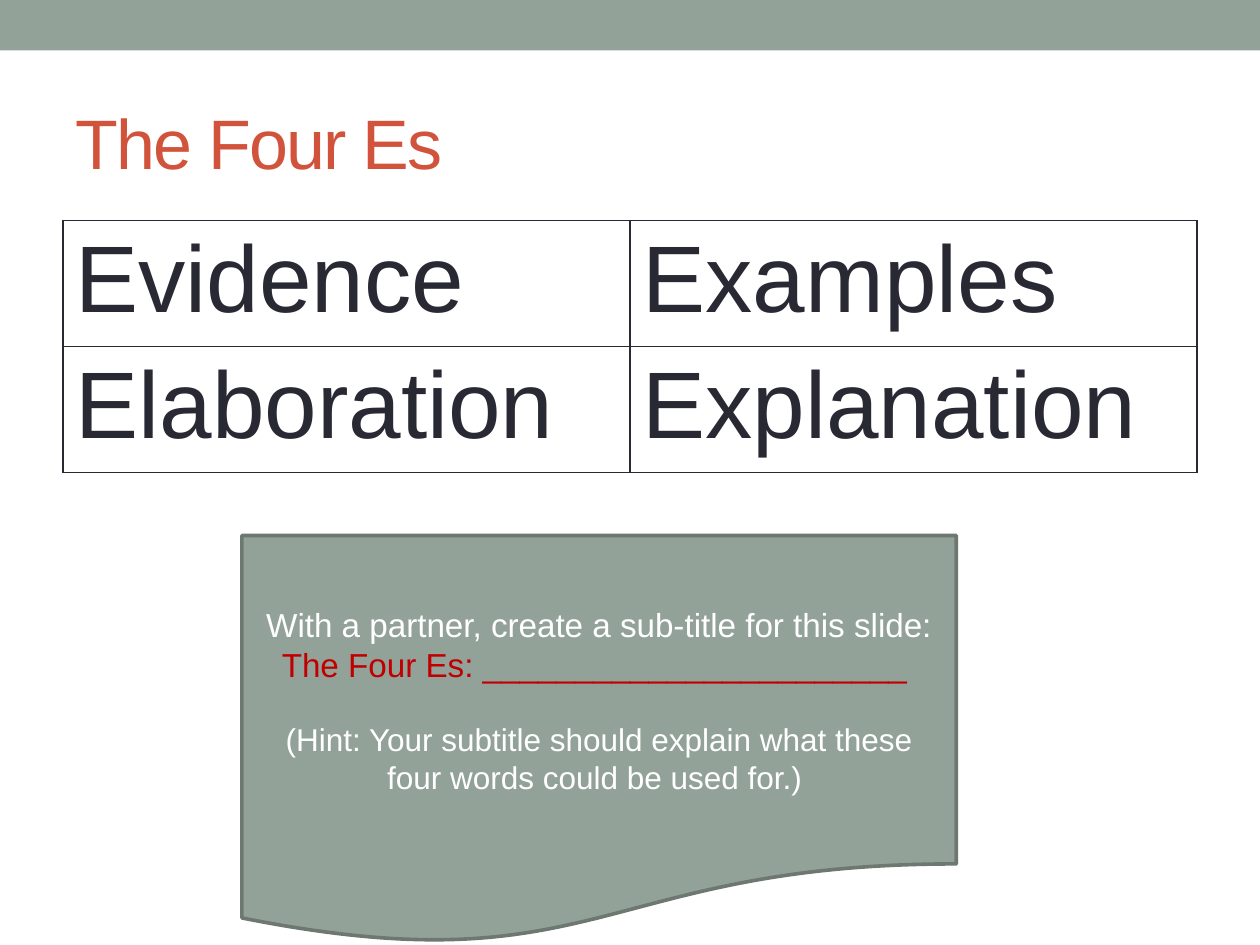
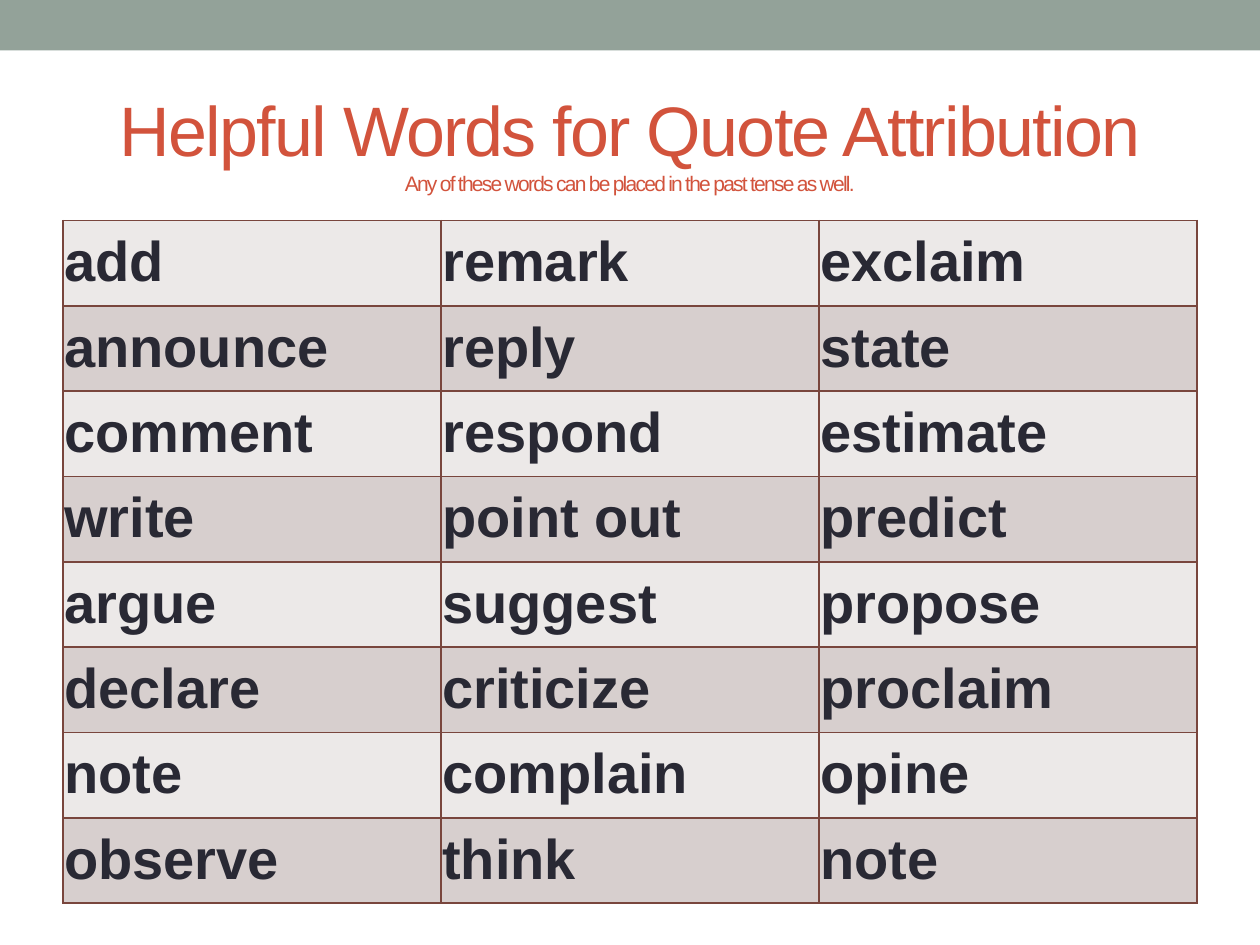
import dataclasses
import typing

import lxml.etree
import pptx
import pptx.dml.color
import pptx.enum.shapes
import pptx.enum.text
import pptx.oxml.ns
import pptx.util

Inches = pptx.util.Inches
Pt = pptx.util.Pt
Shapes = pptx.enum.shapes.MSO_SHAPE
Align = pptx.enum.text.PP_ALIGN
Middle = pptx.enum.text.MSO_ANCHOR.MIDDLE

FONT = "Arial"
SAGE = "93A299"
SAGE_DARK = "6D7871"
RUST = "D2533C"
RUST_DARK = "79463D"
INK = "292934"
WHITE = "FFFFFF"
RED = "C00000"
BAND_FILLS = ("ECE9E8", "D7CFCE")
TITLE_TRACKING = "-100"


@dataclasses.dataclass(frozen=True)
class Span:
    text: str
    size: float
    color: str
    bold: bool = False


@dataclasses.dataclass(frozen=True)
class Para:
    spans: tuple[Span, ...]
    format: dict[str, typing.Any] = dataclasses.field(default_factory=dict)


@dataclasses.dataclass(frozen=True)
class Grid:
    rows: tuple[tuple[str, ...], ...]
    row_height: float
    size: float
    border: str
    bold: bool = False
    fills: tuple[str, ...] = ()
    cell_format: dict[str, typing.Any] = dataclasses.field(default_factory=dict)
    para_format: dict[str, typing.Any] = dataclasses.field(default_factory=dict)


def rgb(color: str) -> pptx.dml.color.RGBColor:
    return pptx.dml.color.RGBColor.from_string(color)


def set_format(target: typing.Any, values: dict[str, typing.Any]) -> None:
    for name, value in values.items():
        setattr(target, name, value)


def paint(fill: typing.Any, color: str) -> None:
    fill.solid()
    fill.fore_color.rgb = rgb(color)


def write(frame: typing.Any, paras: typing.Sequence[Para]) -> None:
    for index, para in enumerate(paras):
        target = frame.add_paragraph() if index else frame.paragraphs[0]
        set_format(target, para.format)
        for position, span in enumerate(para.spans):
            if position:
                target.add_line_break()
            run = target.add_run()
            run.text = span.text
            set_format(
                run.font,
                {"name": FONT, "size": Pt(span.size), "bold": span.bold},
            )
            run.font.color.rgb = rgb(span.color)


def add_block(page: typing.Any, kind: Shapes, at: tuple[float, ...], color: str) -> typing.Any:
    box = page.shapes.add_shape(kind, *map(Inches, at))
    box.shadow.inherit = False
    paint(box.fill, color)
    box.line.fill.background()
    return box


def start_page(deck: typing.Any, *title: Span, align: Align = Align.LEFT) -> typing.Any:
    page = deck.slides.add_slide(deck.slide_layouts[6])
    add_block(page, Shapes.RECTANGLE, (0, 0, 10, 0.4), SAGE)
    box = page.shapes.add_textbox(*map(Inches, (0.5, 0.58, 9, 1.08)))
    set_format(box.text_frame, {"word_wrap": True, "vertical_anchor": Middle})
    write(box.text_frame, [Para(title, {"alignment": align})])
    for run in box.text_frame.paragraphs[0].runs:
        run.font._element.set("spc", TITLE_TRACKING)
    return page


def add_borders(cell: typing.Any, color: str) -> None:
    qn = pptx.oxml.ns.qn
    properties = cell._tc.get_or_add_tcPr()
    for side in ("lnL", "lnR", "lnT", "lnB"):
        line = lxml.etree.SubElement(properties, qn(f"a:{side}"), w=str(Pt(1)))
        solid = lxml.etree.SubElement(line, qn("a:solidFill"))
        lxml.etree.SubElement(solid, qn("a:srgbClr"), val=color)


def add_grid(page: typing.Any, grid: Grid) -> None:
    row_count, column_count = len(grid.rows), len(grid.rows[0])
    table = page.shapes.add_table(
        row_count,
        column_count,
        *map(Inches, (0.5, 1.75, 9, row_count * grid.row_height)),
    ).table
    set_format(table, {"first_row": False, "horz_banding": False})
    for row_index, words in enumerate(grid.rows):
        table.rows[row_index].height = Inches(grid.row_height)
        for column_index, word in enumerate(words):
            cell = table.cell(row_index, column_index)
            set_format(cell, grid.cell_format)
            add_borders(cell, grid.border)
            if grid.fills:
                paint(cell.fill, grid.fills[row_index % len(grid.fills)])
            else:
                cell.fill.background()
            span = Span(word, grid.size, INK, grid.bold)
            write(cell.text_frame, [Para((span,), grid.para_format)])


def add_partner_task(page: typing.Any) -> None:
    box = add_block(page, Shapes.FLOWCHART_DOCUMENT, (1.92, 4.25, 5.67, 3.25), SAGE)
    paint(box.line.fill, SAGE_DARK)
    box.line.width = Pt(2.08)
    set_format(box.text_frame, {"word_wrap": True, "vertical_anchor": Middle})
    centered = {"alignment": Align.CENTER}
    prompt = Span("With a partner, create a sub-title for this slide:", 19, WHITE)
    answer = Span("The Four Es: " + "_" * 23 + " ", 19, RED)
    hint = Span(
        "(Hint: Your subtitle should explain what these four words could be used for.) ",
        18,
        WHITE,
    )
    write(
        box.text_frame,
        [
            Para((prompt,), centered),
            Para((answer,), centered),
            Para((hint,), centered | {"space_before": Pt(20.7)}),
        ],
    )


FOUR_ES = Grid(
    rows=(("Evidence", "Examples"), ("Elaboration", "Explanation")),
    row_height=0.94,
    size=54,
    border=INK,
)

MARGINS = ("margin_left", "margin_top", "margin_right", "margin_bottom")

ATTRIBUTION_WORDS = Grid(
    rows=(
        ("add", "remark", "exclaim"),
        ("announce", "reply", "state"),
        ("comment", "respond", "estimate"),
        ("write", "point out", "predict"),
        ("argue", "suggest", "propose"),
        ("declare", "criticize", "proclaim"),
        ("note", "complain", "opine"),
        ("observe", "think", "note"),
    ),
    row_height=5.42 / 8,
    size=32,
    border=RUST_DARK,
    bold=True,
    fills=BAND_FILLS,
    cell_format=dict.fromkeys(MARGINS, Inches(0.01)),
    para_format={"line_spacing": 1.15, "space_after": Pt(10)},
)


def main() -> None:
    deck = pptx.Presentation()
    set_format(deck, {"slide_width": Inches(10), "slide_height": Inches(7.5)})

    page = start_page(deck, Span("The Four Es", 40, RUST))
    add_grid(page, FOUR_ES)
    add_partner_task(page)

    page = start_page(
        deck,
        Span("Helpful Words for Quote Attribution", 40, RUST),
        Span("Any of these words can be placed in the past tense as well.", 12, RUST),
        align=Align.CENTER,
    )
    add_grid(page, ATTRIBUTION_WORDS)

    deck.save("out.pptx")


if __name__ == "__main__":
    main()
